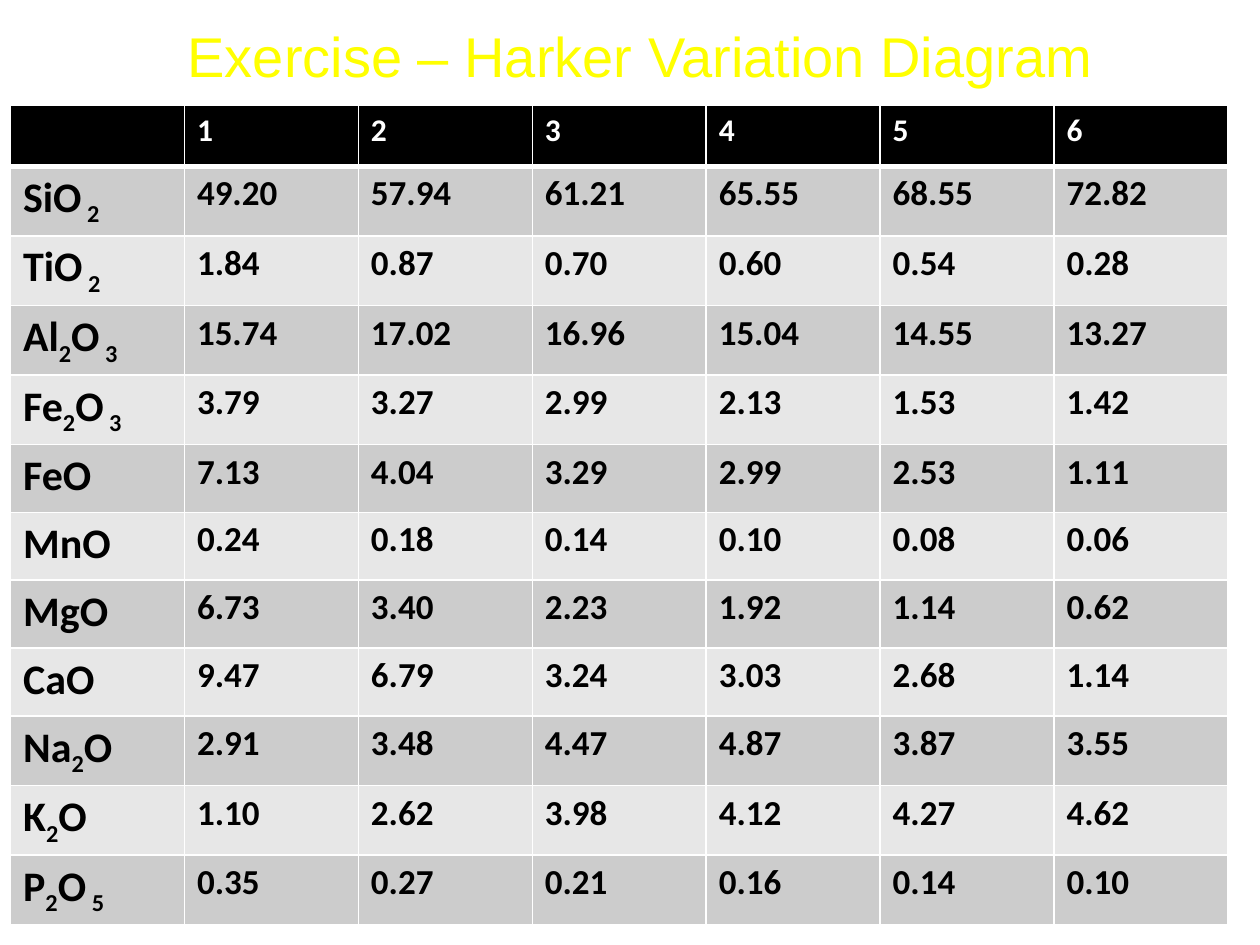
from lxml import etree
from pptx import Presentation
from pptx.dml.color import RGBColor
from pptx.enum import text
from pptx.oxml import ns
from pptx.util import Pt

COLORS = {"title": "FFFF00", "header": "000000", "odd": "CCCCCC", "even": "E7E7E7",
          "border": "FFFFFF", "header_text": "FFFFFF", "body_text": "000000"}

# In oxide formulas, every second part between bars is a subscript.
HEADER = ["", "1", "2", "3", "4", "5", "6"]
OXIDES = [
    ["SiO| 2", "49.20", "57.94", "61.21", "65.55", "68.55", "72.82"],
    ["TiO| 2", "1.84", "0.87", "0.70", "0.60", "0.54", "0.28"],
    ["Al|2|O| 3", "15.74", "17.02", "16.96", "15.04", "14.55", "13.27"],
    ["Fe|2|O| 3", "3.79", "3.27", "2.99", "2.13", "1.53", "1.42"],
    ["FeO", "7.13", "4.04", "3.29", "2.99", "2.53", "1.11"],
    ["MnO", "0.24", "0.18", "0.14", "0.10", "0.08", "0.06"],
    ["MgO", "6.73", "3.40", "2.23", "1.92", "1.14", "0.62"],
    ["CaO", "9.47", "6.79", "3.24", "3.03", "2.68", "1.14"],
    ["Na|2|O", "2.91", "3.48", "4.47", "4.87", "3.87", "3.55"],
    ["K|2|O", "1.10", "2.62", "3.98", "4.12", "4.27", "4.62"],
    ["P|2|O| 5", "0.35", "0.27", "0.21", "0.16", "0.14", "0.10"],
]


def add_borders(cell, bottom_width):
    """Draw all four cell edges; only the bottom one varies in width."""
    properties = cell._tc.get_or_add_tcPr()
    for side, width in (("L", 1), ("R", 1), ("T", 1), ("B", bottom_width)):
        line = etree.SubElement(properties, ns.qn(f"a:ln{side}"), w=str(Pt(width)))
        fill = etree.SubElement(line, ns.qn("a:solidFill"))
        etree.SubElement(fill, ns.qn("a:srgbClr"), val=COLORS["border"])


prs = Presentation()
prs.slide_width, prs.slide_height = Pt(720), Pt(540)
slide = prs.slides.add_slide(prs.slide_layouts[5])

title = slide.shapes.title
title.left, title.top, title.width, title.height = Pt(36), Pt(0), Pt(660), Pt(62.5)
title.text_frame.text = "Exercise – Harker Variation Diagram"
title.text_frame.vertical_anchor = text.MSO_ANCHOR.MIDDLE
heading = title.text_frame.paragraphs[0]
heading.alignment = text.PP_ALIGN.CENTER
heading_font = heading.runs[0].font
heading_font.name, heading_font.size = "Arial", Pt(32)
heading_font.color.rgb = RGBColor.from_string(COLORS["title"])

rows = [HEADER] + OXIDES
analyses = slide.shapes.add_table(len(rows), len(HEADER), Pt(6), Pt(60),
                                  Pt(696), Pt(462)).table
for column in analyses.columns:
    column.width = Pt(99.4)

for r, values in enumerate(rows):
    is_header = r == 0
    analyses.rows[r].height = Pt(35 if is_header else 38.8)
    band = "header" if is_header else "odd" if r % 2 else "even"
    ink = "header_text" if is_header else "body_text"
    for c, value in enumerate(values):
        cell = analyses.cell(r, c)
        add_borders(cell, 3 if is_header or r == 0 else 1)
        cell.fill.solid()
        cell.fill.fore_color.rgb = RGBColor.from_string(COLORS[band])
        if not value:
            continue
        size = 18 if is_header else 24 if c == 0 else 20
        for i, part in enumerate(value.split("|")):
            run = cell.text_frame.paragraphs[0].add_run()
            run.text = part
            font = run.font
            font.name, font.size, font.bold = "Calibri", Pt(size), True
            font.color.rgb = RGBColor.from_string(COLORS[ink])
            if i % 2:
                font._element.set("baseline", "-25000")

prs.save("out.pptx")
